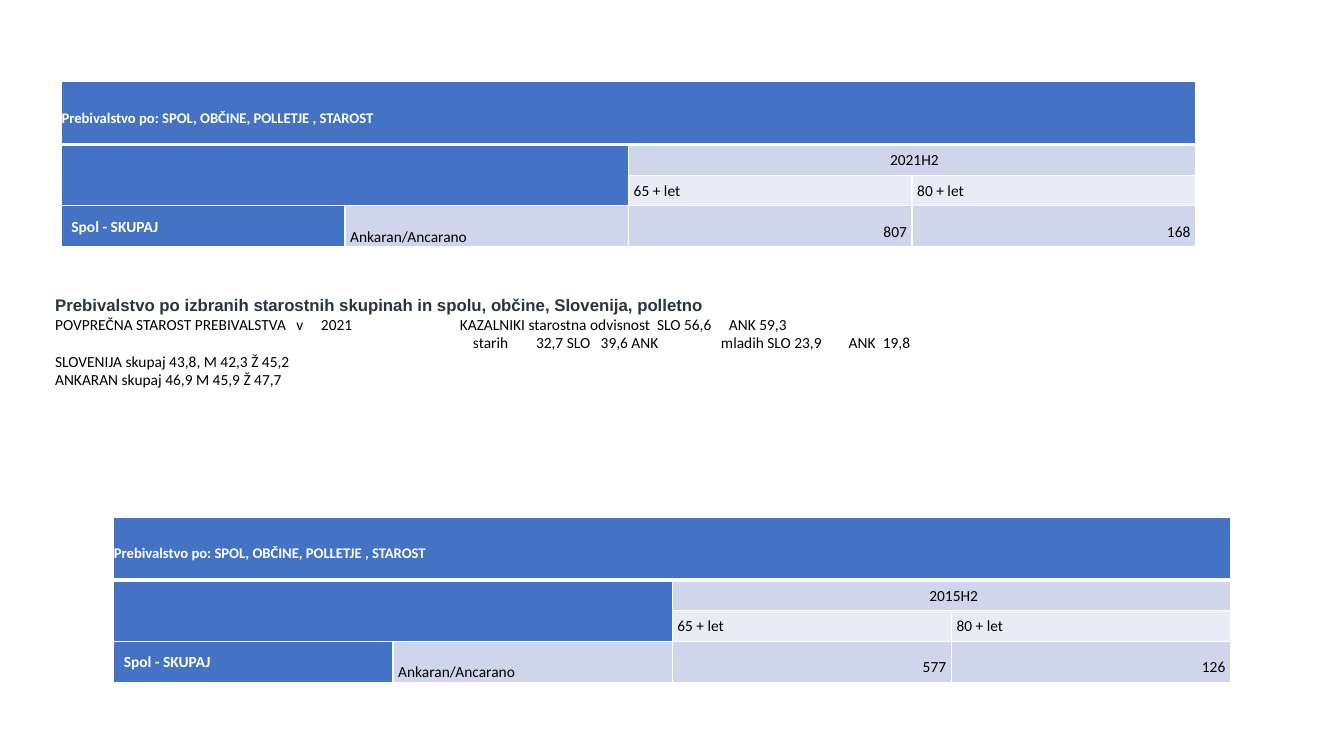
from lxml import etree
from pptx import Presentation
from pptx.dml.color import RGBColor
from pptx.enum.text import MSO_ANCHOR, PP_ALIGN
from pptx.oxml.ns import qn
from pptx.util import Cm, Pt

LEFT, CENTER, RIGHT = PP_ALIGN.LEFT, PP_ALIGN.CENTER, PP_ALIGN.RIGHT
MIDDLE, BOTTOM = MSO_ANCHOR.MIDDLE, MSO_ANCHOR.BOTTOM

COLORS = {
    "header": "4472C4",
    "band": "CFD5EA",
    "light_band": "E9EBF5",
    "white": "FFFFFF",
    "black": "000000",
    "heading": "273443",
}
ROW_HEIGHTS = (1.54, 0.76, 0.76, 1.03)
MARGIN_SIDES = ("margin_left", "margin_top", "margin_right", "margin_bottom")
DEFAULT_MARGINS = (0.13, 0.13, 0.13, 0.13)
TABLE_TITLE = "Prebivalstvo po: SPOL, OBČINE, POLLETJE , STAROST"
HEADING = "Prebivalstvo po izbranih starostnih skupinah in spolu, občine, Slovenija, polletno"

# Each line: text with tabs, and the tab positions in cm from the text edge
SUMMARY_LINES = (
    ("POVPREČNA STAROST PREBIVALSTVA\tv\t2021\tKAZALNIKI starostna odvisnost\tSLO 56,6\tANK 59,3",
     (6.08, 6.7, 10.2, 15.17, 16.98)),
    ("\tstarih\t32,7 SLO\t39,6 ANK\tmladih SLO 23,9\tANK\t19,8",
     (10.53, 12.12, 13.75, 16.78, 20.0, 20.86)),
    ("SLOVENIJA skupaj 43,8, M 42,3 Ž 45,2", ()),
    ("ANKARAN skupaj 46,9 M 45,9 Ž 47,7", ()),
)


def apply(target, values):
    for name, value in values.items():
        setattr(target, name, value)


class Page:
    def __init__(self, deck):
        self.slide = deck.slides.add_slide(deck.slide_layouts[6])
        self.text_style = {"name": "Calibri", "size": Pt(11), "bold": False}

    def add_span(self, para, text, color="black", **style):
        span = para.add_run()
        span.text = text
        apply(span.font, {**self.text_style, **style})
        span.font.color.rgb = RGBColor.from_string(COLORS[color])

    def set_borders(self, cell, widths):
        properties = cell._tc.get_or_add_tcPr()
        for side, width in zip("LRTB", widths):
            line = etree.SubElement(properties, qn(f"a:ln{side}"), w=str(Pt(width)))
            fill = etree.SubElement(line, qn("a:solidFill"))
            etree.SubElement(fill, qn("a:srgbClr"), val=COLORS["white"])

    def fill_cell(self, cell, text, fill, color="black", align=LEFT, anchor=BOTTOM,
                  margins=DEFAULT_MARGINS, spacing=1.07, **style):
        cell.fill.solid()
        cell.fill.fore_color.rgb = RGBColor.from_string(COLORS[fill])
        cell.vertical_anchor = anchor
        apply(cell, dict(zip(MARGIN_SIDES, map(Cm, margins))))
        para = cell.text_frame.paragraphs[0]
        para.font.size = Pt(11)
        if text:
            apply(para, {"alignment": align, "line_spacing": spacing, "space_after": Pt(8)})
            self.add_span(para, text, color, **style)

    def population_table(self, left, top, width, period, over_65, over_80):
        frame = self.slide.shapes.add_table(
            4, 4, Cm(left), Cm(top), Cm(width), Cm(sum(ROW_HEIGHTS)))
        table = frame.table
        apply(table, {"first_row": False, "horz_banding": False})
        for row, height in zip(table.rows, ROW_HEIGHTS):
            row.height = Cm(height)
        for column in table.columns:
            column.width = Cm(width / 4)
        for row_index in range(4):
            for column_index in range(4):
                top_width = 3 if row_index == 1 else 1
                bottom_width = 3 if row_index == 0 else 1
                self.set_borders(table.cell(row_index, column_index),
                                 (1, 1, top_width, bottom_width))
        for first, last in (((0, 0), (0, 3)), ((1, 0), (2, 1)), ((1, 2), (1, 3))):
            table.cell(*first).merge(table.cell(*last))

        white_bold = {"color": "white", "bold": True}
        cells = {
            (0, 0): (TABLE_TITLE, "header", {
                **white_bold, "size": Pt(10.5), "spacing": Pt(21),
                "margins": (0, 0.41, 0.13, 0.43)}),
            (1, 0): ("", "header", {}),
            (1, 2): (period, "band", {"align": CENTER, "margins": (0.25, 0.13, 0.13, 0.13)}),
            (2, 2): ("65 + let", "light_band", {}),
            (2, 3): ("80 + let", "light_band", {}),
            (3, 0): ("Spol - SKUPAJ", "header", {
                **white_bold, "anchor": MIDDLE, "margins": (0.25,) * 4}),
            (3, 1): ("Ankaran/Ancarano", "band", {"margins": (0.13, 0, 0.08, 0)}),
            (3, 2): (over_65, "band", {"align": RIGHT}),
            (3, 3): (over_80, "band", {"align": RIGHT}),
        }
        for position, (text, fill, values) in cells.items():
            self.fill_cell(table.cell(*position), text, fill, **values)

    def set_tabs(self, para, positions):
        if positions:
            tabs = etree.SubElement(para._p.get_or_add_pPr(), qn("a:tabLst"))
            for position in positions:
                etree.SubElement(tabs, qn("a:tab"), pos=str(Cm(position)), algn="l")

    def summary(self, left, top, width, height):
        box = self.slide.shapes.add_textbox(Cm(left), Cm(top), Cm(width), Cm(height))
        apply(box.text_frame, {"word_wrap": True, "vertical_anchor": MIDDLE})
        self.add_span(box.text_frame.paragraphs[0], HEADING, "heading",
                      name="Arial", size=Pt(12), bold=True)
        for text, positions in SUMMARY_LINES:
            para = box.text_frame.add_paragraph()
            self.set_tabs(para, positions)
            self.add_span(para, text)


def main():
    deck = Presentation()
    apply(deck, {"slide_width": Cm(33.87), "slide_height": Cm(19.05)})
    page = Page(deck)
    page.population_table(2.87, 13.03, 28.14, "2015H2", "577", "126")
    page.population_table(1.55, 2.06, 28.58, "2021H2", "807", "168")
    page.summary(1.14, 7.29, 34.8, 2.64)
    deck.save("out.pptx")


if __name__ == "__main__":
    main()
